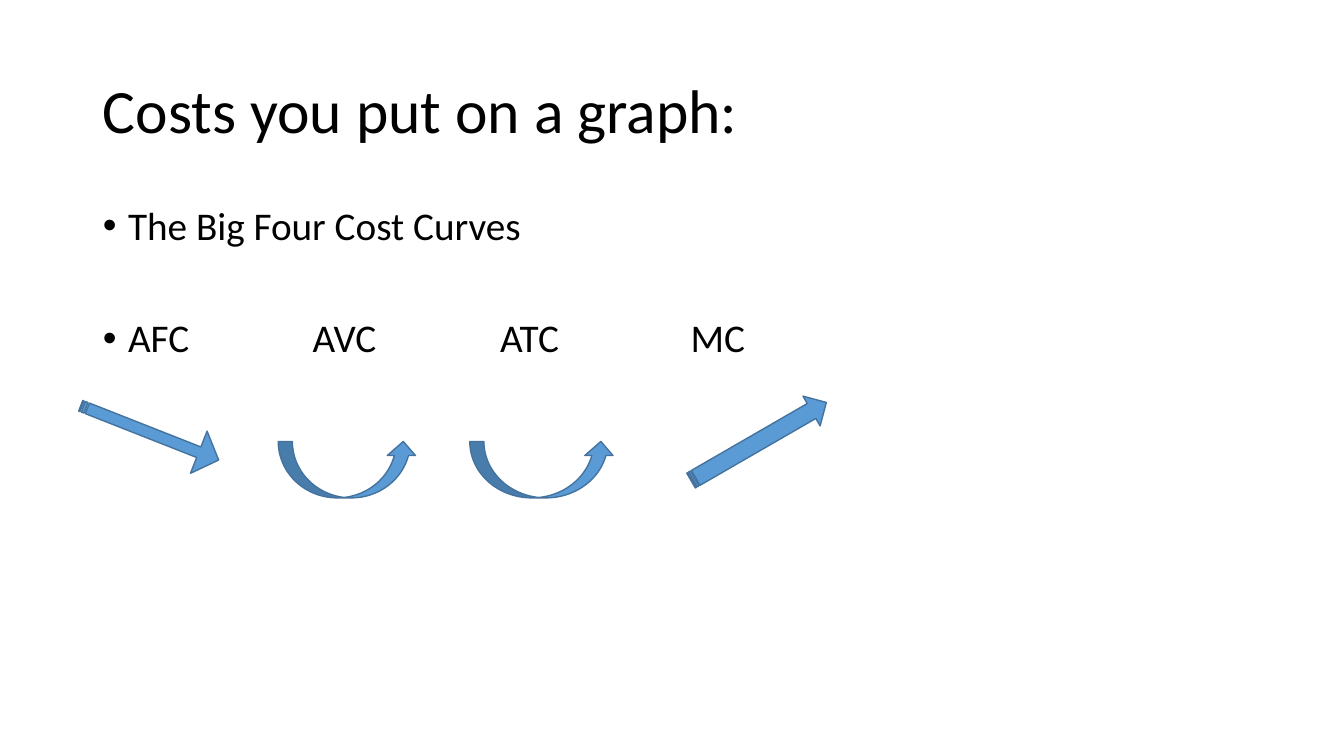
from dataclasses import dataclass

from lxml import etree
from pptx import Presentation
from pptx.dml.color import RGBColor
from pptx.enum import shapes, text
from pptx.oxml import ns
from pptx.util import Inches, Pt

BLACK, BLUE, DARK_BLUE = "000000", "5B9BD5", "43739E"
CURVED = shapes.MSO_SHAPE.CURVED_UP_ARROW
STRIPED = shapes.MSO_SHAPE.STRIPED_RIGHT_ARROW


@dataclass
class CostArrow:
    kind: int
    left: float
    top: float
    width: float
    height: float
    rotation: float = 0
    adjustments: tuple[float, ...] = ()


COST_ARROWS = [
    CostArrow(CURVED, 2.76, 4.38, 1.38, 0.56),
    CostArrow(CURVED, 4.66, 4.38, 1.44, 0.56),
    CostArrow(STRIPED, 0.75, 4.07, 1.47, 0.45, 21.5, (0.25, 0.47)),
    CostArrow(STRIPED, 6.75, 4.21, 1.55, 0.34, 330),
]


def color(hex_code: str) -> RGBColor:
    return RGBColor.from_string(hex_code)


def place(holder, left: float, top: float, width: float, height: float, anchor) -> None:
    holder.left, holder.top = Inches(left), Inches(top)
    holder.width, holder.height = Inches(width), Inches(height)
    holder.text_frame.word_wrap = True
    holder.text_frame.auto_size = text.MSO_AUTO_SIZE.NONE
    holder.text_frame.vertical_anchor = anchor


def write(paragraph, words: str, *, size: float, before: float = 0,
          bullet: bool = False, tabs: tuple[float, ...] = ()) -> None:
    paragraph.alignment = text.PP_ALIGN.LEFT
    paragraph.line_spacing = 0.9
    paragraph.space_before = Pt(before)
    run = paragraph.add_run()
    run.text = words
    run.font.size = Pt(size)
    run.font.name = "Calibri"
    run.font.color.rgb = color(BLACK)
    properties = paragraph._p.get_or_add_pPr()
    if bullet:
        properties.set("marL", str(Inches(0.25)))
        properties.set("indent", str(Inches(-0.25)))
        etree.SubElement(properties, ns.qn("a:buFont"), typeface="Arial")
        etree.SubElement(properties, ns.qn("a:buChar"), char="•")
    if tabs:
        stops = etree.SubElement(properties, ns.qn("a:tabLst"))
        for position in tabs:
            etree.SubElement(stops, ns.qn("a:tab"), pos=str(Inches(position)), algn="l")


def draw_arrow(slide, arrow: CostArrow) -> None:
    shape = slide.shapes.add_shape(
        arrow.kind, Inches(arrow.left), Inches(arrow.top),
        Inches(arrow.width), Inches(arrow.height))
    shape.rotation = arrow.rotation
    for index, value in enumerate(arrow.adjustments):
        shape.adjustments[index] = value
    shape.shadow.inherit = False
    shape.fill.solid()
    shape.fill.fore_color.rgb = color(BLUE)
    shape.line.color.rgb = color(DARK_BLUE)
    shape.line.width = Pt(1)


def main() -> None:
    deck = Presentation()
    deck.slide_width, deck.slide_height = Inches(13.33), Inches(7.5)
    slide = deck.slides.add_slide(deck.slide_layouts[1])

    # Title
    title = slide.shapes.title
    place(title, 0.92, 0.4, 11.5, 1.45, text.MSO_ANCHOR.MIDDLE)
    write(title.text_frame.paragraphs[0], "Costs you put on a graph:", size=44)

    # Cost curve list
    costs = slide.placeholders[1]
    place(costs, 0.92, 2, 11.5, 4.76, text.MSO_ANCHOR.TOP)
    write(costs.text_frame.paragraphs[0], "The Big Four Cost Curves",
          size=28, before=10, bullet=True)
    write(costs.text_frame.add_paragraph(), "AFC\tAVC\tATC\tMC",
          size=28, before=50, bullet=True, tabs=(2.08, 3.94, 5.83))

    # Direction of each curve
    for arrow in COST_ARROWS:
        draw_arrow(slide, arrow)

    deck.save("out.pptx")


if __name__ == "__main__":
    main()
